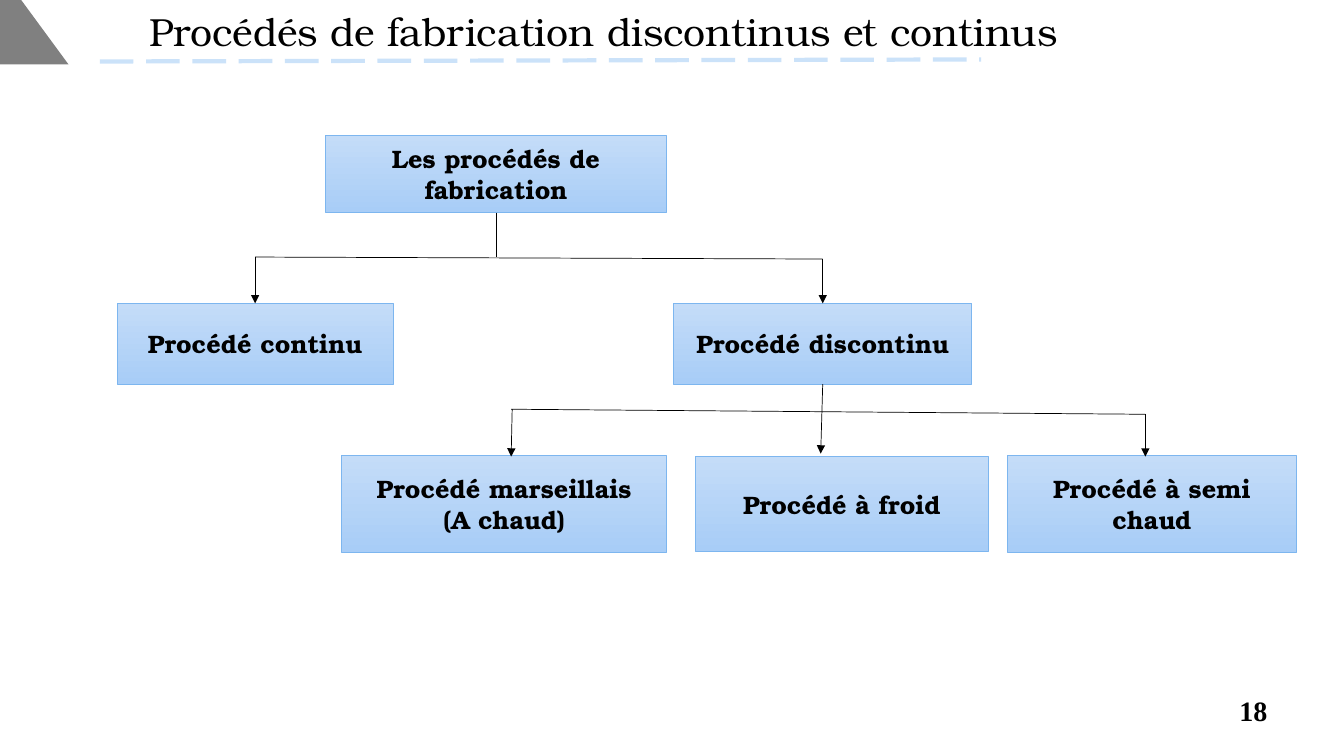
from lxml.etree import SubElement
from pptx import Presentation
from pptx.dml.color import RGBColor
from pptx.enum.dml import MSO_LINE
from pptx.enum.shapes import MSO_CONNECTOR, MSO_SHAPE
from pptx.enum.text import MSO_ANCHOR, MSO_AUTO_SIZE, PP_ALIGN
from pptx.oxml.ns import qn
from pptx.util import Pt

SCALE = 9144
TOP, BOTTOM = 0, 2


def px(*values):
    return [value * SCALE for value in values]


def color(text):
    return RGBColor.from_string(text)


class Deck:
    """Holds the style and the current slide, and draws each kind of element."""

    serif = "TeX Gyre Bonum"
    ink = "000000"
    edge = "7DB6EF"
    shades = ("C4DCF8", "A8CDF7")

    def __init__(self):
        self.show = Presentation()
        self.show.slide_width, self.show.slide_height = px(1333, 750)
        self.slide = self.show.slides.add_slide(self.show.slide_layouts[5])
        self.shapes = self.slide.shapes

    def label(self, frame, text, size, font, bold, align):
        frame.word_wrap = True
        frame.auto_size = MSO_AUTO_SIZE.NONE
        frame.text = text
        for para in frame.paragraphs:
            para.alignment = align
            para.font.name = font
            para.font.size = Pt(size)
            para.font.bold = bold
            para.font.color.rgb = color(self.ink)

    def title(self, text, *area):
        head = self.shapes.title
        head.left, head.top, head.width, head.height = px(*area)
        self.label(head.text_frame, text, 28, self.serif, False, PP_ALIGN.LEFT)
        head.text_frame.vertical_anchor = MSO_ANCHOR.TOP

    def number(self, text, *area):
        note = self.shapes.add_textbox(*px(*area))
        self.label(note.text_frame, text, 20, "Times New Roman", True, PP_ALIGN.RIGHT)

    def corner(self, fill, start, *points):
        pen = self.shapes.build_freeform(*start, scale=SCALE)
        pen.add_line_segments(points)
        shape = pen.convert_to_shape()
        shape.shadow.inherit = False
        shape.fill.solid()
        shape.fill.fore_color.rgb = color(fill)
        shape.line.fill.background()

    def box(self, text, *area):
        shape = self.shapes.add_shape(MSO_SHAPE.RECTANGLE, *px(*area))
        shape.shadow.inherit = False
        shape.fill.gradient()
        shape.fill.gradient_angle = 270
        for stop, shade in zip(shape.fill.gradient_stops, self.shades):
            stop.color.rgb = color(shade)
        shape.line.color.rgb = color(self.edge)
        shape.line.width = Pt(0.5)
        self.label(shape.text_frame, text, 18, self.serif, True, PP_ALIGN.CENTER)
        shape.text_frame.vertical_anchor = MSO_ANCHOR.MIDDLE
        return shape

    def line(self, *ends, tint=ink, width=0.5, dash=None, arrow=False,
             source=None, target=None):
        link = self.shapes.add_connector(MSO_CONNECTOR.STRAIGHT, *px(*ends))
        link.line.color.rgb = color(tint)
        link.line.width = Pt(width)
        if dash:
            link.line.dash_style = dash
        props = link._element.spPr
        if arrow:
            SubElement(props.find(qn("a:ln")), qn("a:tailEnd"), type="triangle")
        SubElement(props, qn("a:effectLst"))
        if source:
            link.begin_connect(source, BOTTOM)
        if target:
            link.end_connect(target, TOP)


def main():
    deck = Deck()
    deck.corner("808080", (0, 0), (21, 0), (68, 64), (0, 64))
    deck.line(99, 61, 973, 59, tint="CBE2F9", width=3, dash=MSO_LINE.LONG_DASH)
    deck.title("Procédés de fabrication discontinus et continus", 138, 2, 997, 57)

    root = deck.box("Les procédés de fabrication", 323, 134, 338, 77)
    steady = deck.box("Procédé continu", 116, 301, 274, 80)
    batch = deck.box("Procédé discontinu", 668, 301, 296, 80)
    deck.box("Procédé marseillais\n(A chaud)", 339, 452, 322, 96)
    deck.box("Procédé à froid", 690, 453, 290, 94)
    deck.box("Procédé à semi chaud", 999, 452, 287, 96)

    deck.line(492, 211, 492, 255, source=root)
    deck.line(253, 255, 816, 257)
    deck.line(253, 255, 253, 301, arrow=True, target=steady)
    deck.line(816, 257, 816, 301, arrow=True, target=batch)

    deck.line(816, 381, 814, 450, arrow=True, source=batch)
    deck.line(507, 406, 1136, 411)
    deck.line(508, 406, 507, 453, arrow=True)
    deck.line(1136, 411, 1136, 453, arrow=True)

    deck.number("18", 956, 683, 311, 52)
    deck.show.save("out.pptx")


if __name__ == "__main__":
    main()
